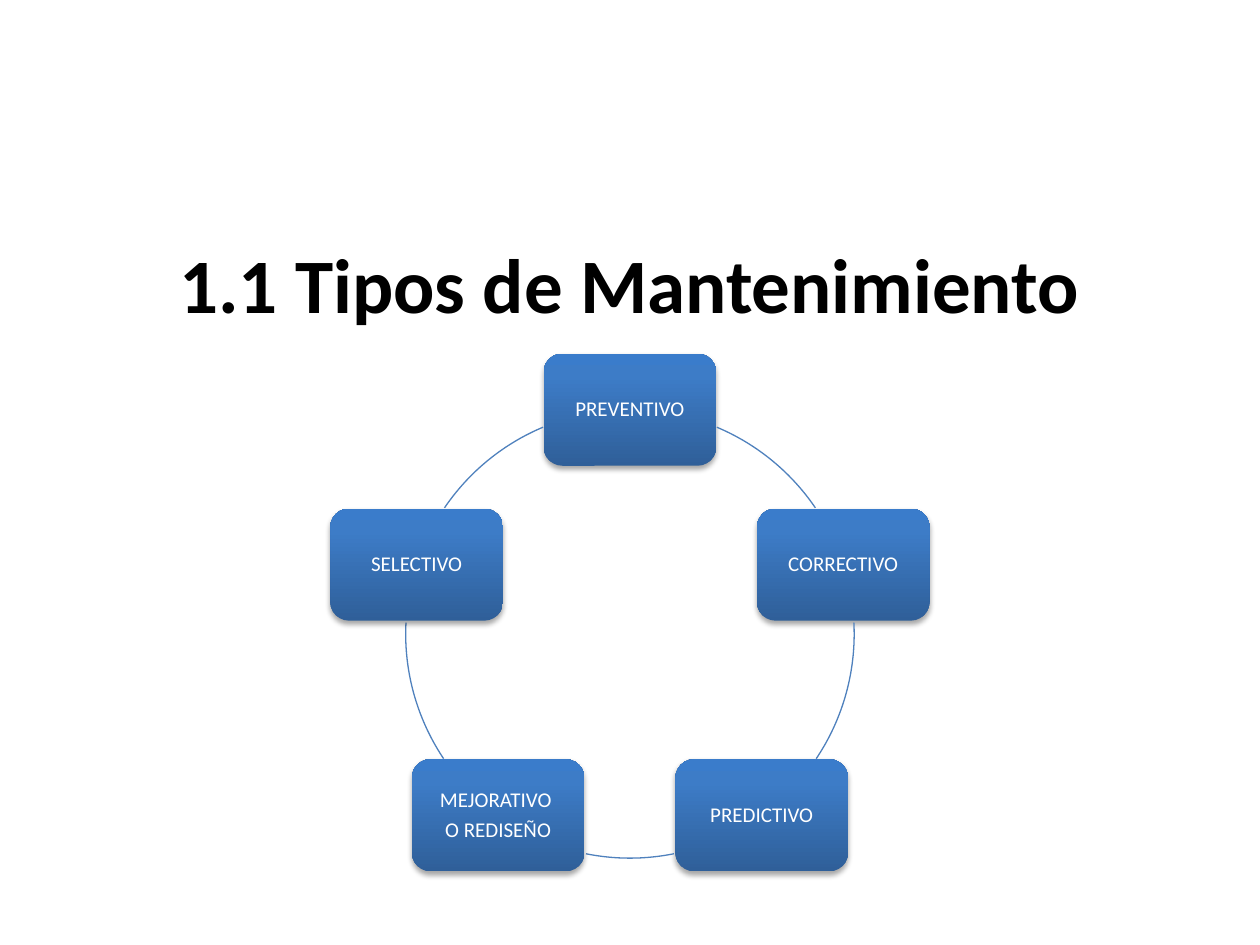
"""Build a slide with the five types of maintenance arranged in a cycle."""
import copy
import math
from dataclasses import dataclass
from typing import Any

import lxml.etree
import pptx
import pptx.dml.color
import pptx.enum.shapes
import pptx.enum.text
import pptx.oxml.ns
import pptx.util

Cm = pptx.util.Cm
Pt = pptx.util.Pt

COLORS = {
    "title": "000000",
    "label": "FFFFFF",
    "dark": "2F5F99",
    "middle": "3D7CC7",
    "light": "3A7CCB",
    "arc": "4F81BD",
    "shadow": "000000",
}
GRADIENT = [(0, "dark"), (0.8, "middle"), (1, "light")]
CENTER_X, CENTER_Y, RADIUS = 12.7, 12.78, 4.52
CARD_WIDTH, CARD_HEIGHT = 3.48, 2.26
FONT = {"name": "Calibri"}
TITLE_FONT = FONT | {"size": Pt(44), "bold": True}
LABEL_FONT = FONT | {"size": Pt(12), "bold": False}
LABEL_FORMAT = {
    "alignment": pptx.enum.text.PP_ALIGN.CENTER,
    "line_spacing": 0.9,
    "space_after": Pt(4.2),
}
CARD_FRAME = {
    "word_wrap": True,
    "vertical_anchor": pptx.enum.text.MSO_ANCHOR.MIDDLE,
    "margin_left": Cm(0.24),
    "margin_right": Cm(0.24),
    "margin_top": Cm(0.24),
    "margin_bottom": Cm(0.24),
}


@dataclass(frozen=True)
class Stage:
    """A card of the cycle and the arc that leaves it, in clockwise degrees."""

    lines: tuple[str, ...]
    arc_start: float
    arc_end: float


STAGES = [
    Stage(("PREVENTIVO",), 292.8, 325.8),
    Stage(("CORRECTIVO",), 357.1, 33.8),
    Stage(("PREDICTIVO",), 78.7, 101.3),
    Stage(("MEJORATIVO ", "O REDISEÑO"), 146.2, 182.9),
    Stage(("SELECTIVO",), 214.2, 247.2),
]


def apply(target: Any, values: dict[str, Any]) -> None:
    """Set each named attribute on the target."""
    for name, value in values.items():
        setattr(target, name, value)


def color(name: str) -> pptx.dml.color.RGBColor:
    """Look up a palette colour."""
    return pptx.dml.color.RGBColor.from_string(COLORS[name])


def write_title(slide: Any) -> None:
    """Place and fill the title placeholder."""
    title = slide.shapes.title
    apply(title, {"left": Cm(1.27), "top": Cm(4.11), "width": Cm(22.86), "height": Cm(3.18)})
    title.text_frame.vertical_anchor = pptx.enum.text.MSO_ANCHOR.MIDDLE
    para = title.text_frame.paragraphs[0]
    para.alignment = pptx.enum.text.PP_ALIGN.CENTER
    span = para.add_run()
    span.text = "1.1 Tipos de Mantenimiento"
    apply(span.font, TITLE_FONT)
    span.font.color.rgb = color("title")


def fill_gradient(card: Any) -> None:
    """Fill a card from dark at the bottom to light at the top."""
    card.fill.gradient()
    card.fill.gradient_angle = 90
    stop_list = card._element.spPr.find(".//" + pptx.oxml.ns.qn("a:gsLst"))
    stop_list.append(copy.deepcopy(stop_list[-1]))
    for stop, (position, name) in zip(card.fill.gradient_stops, GRADIENT):
        stop.position = position
        stop.color.rgb = color(name)


def add_shadow(card: Any) -> None:
    """Give a card a soft shadow below."""
    card.shadow.inherit = False
    qn = pptx.oxml.ns.qn
    effects = card._element.spPr.find(qn("a:effectLst"))
    shadow = lxml.etree.SubElement(
        effects, qn("a:outerShdw"), blurRad="40000", dist="23000", dir="5400000", rotWithShape="0"
    )
    tint = lxml.etree.SubElement(shadow, qn("a:srgbClr"), val=COLORS["shadow"])
    lxml.etree.SubElement(tint, qn("a:alpha"), val="35000")


def draw_card(slide: Any, stage: Stage, angle: float) -> None:
    """Draw a labelled card centred on the circle at the angle."""
    x = CENTER_X + RADIUS * math.cos(math.radians(angle))
    y = CENTER_Y + RADIUS * math.sin(math.radians(angle))
    card = slide.shapes.add_shape(
        pptx.enum.shapes.MSO_SHAPE.ROUNDED_RECTANGLE,
        Cm(x - CARD_WIDTH / 2), Cm(y - CARD_HEIGHT / 2), Cm(CARD_WIDTH), Cm(CARD_HEIGHT),
    )
    fill_gradient(card)
    card.line.fill.background()
    add_shadow(card)
    frame = card.text_frame
    apply(frame, CARD_FRAME)
    frame.text = "\n".join(stage.lines)
    for para in frame.paragraphs:
        apply(para, LABEL_FORMAT)
        for span in para.runs:
            apply(span.font, LABEL_FONT)
            span.font.color.rgb = color("label")


def draw_arc(slide: Any, stage: Stage) -> None:
    """Draw the part of the circle that leads to the next card."""
    arc = slide.shapes.add_shape(
        pptx.enum.shapes.MSO_SHAPE.ARC,
        Cm(CENTER_X - RADIUS), Cm(CENTER_Y - RADIUS), Cm(2 * RADIUS), Cm(2 * RADIUS),
    )
    for index, degrees in enumerate((stage.arc_start, stage.arc_end)):
        arc.adjustments[index] = degrees * 0.6
    arc.fill.background()
    arc.line.color.rgb = color("arc")
    arc.line.width = Pt(0.75)
    arc.shadow.inherit = False


def main() -> None:
    """Create and save the deck."""
    deck = pptx.Presentation()
    apply(deck, {"slide_width": Cm(25.4), "slide_height": Cm(19.05)})
    page = deck.slides.add_slide(deck.slide_layouts[5])
    write_title(page)
    for index, stage in enumerate(STAGES):
        draw_card(page, stage, index * 360 / len(STAGES) - 90)
        draw_arc(page, stage)
    deck.save("out.pptx")


if __name__ == "__main__":
    main()
